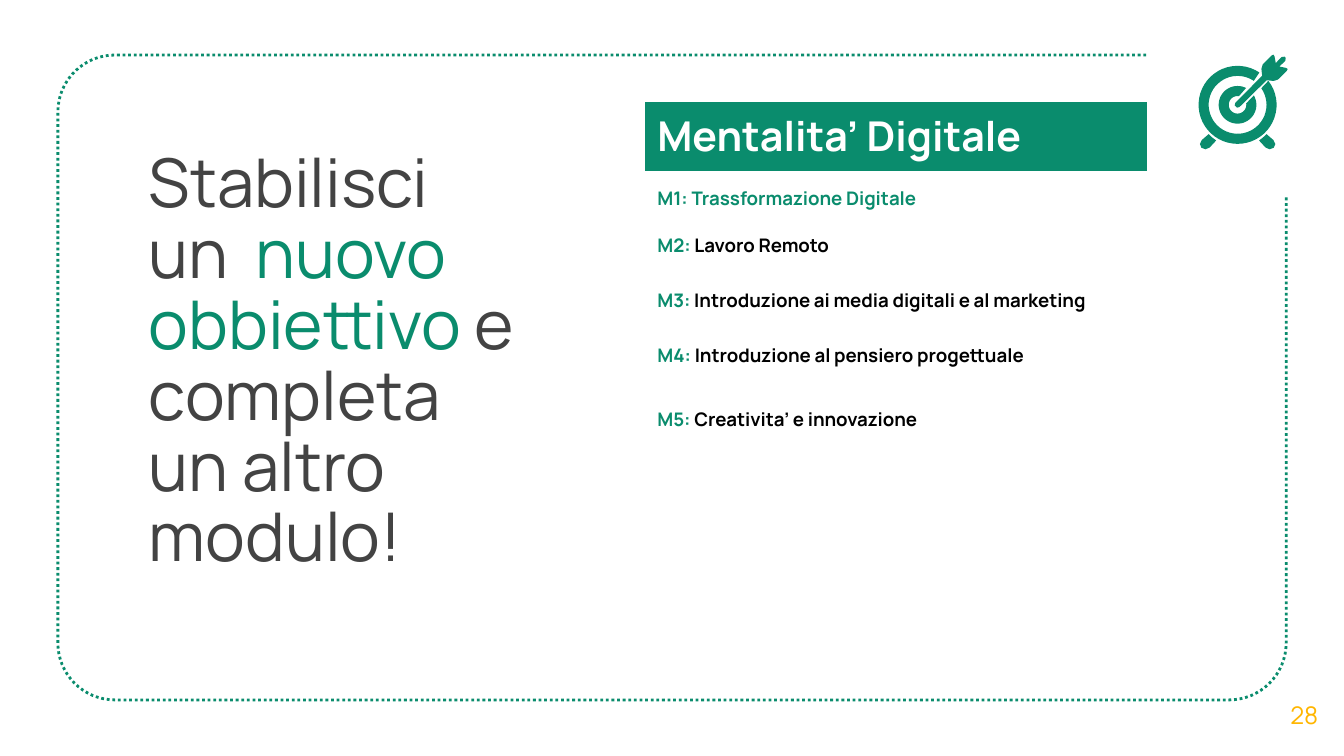
from math import cos, radians, sin

from pptx import Presentation
from pptx.dml.color import RGBColor
from pptx.enum.dml import MSO_LINE
from pptx.enum.text import MSO_ANCHOR, PP_ALIGN
from pptx.util import Pt

GREEN, GREY, WHITE, BLACK, YELLOW = "0A8C6D", "434343", "FFFFFF", "000000", "FFB600"


def rgb(value):
    return RGBColor.from_string(value)


def arc(cx, cy, radius, start, end, steps=16):
    """Points along an arc; angles in degrees, clockwise from the right."""
    angles = [radians(start + (end - start) * i / steps) for i in range(steps + 1)]
    return [(cx + radius * cos(a), cy + radius * sin(a)) for a in angles]


def set_all(obj, values):
    for name, value in values.items():
        setattr(obj, name, value)


class Deck:
    font = "Manrope"

    def __init__(self, prs):
        self.s = prs.slides.add_slide(prs.slide_layouts[6])

    def runs(self, p, parts, size, bold=False):
        """Write (text, colour) parts; a None part is a line break."""
        for part in parts:
            if part is None:
                p.add_line_break()
                continue
            r = p.add_run()
            r.text = part[0]
            set_all(r.font, {"name": self.font, "size": Pt(size), "bold": bold})
            r.font.color.rgb = rgb(part[1])

    def text(self, box, parts, size, frame, para):
        tf = self.s.shapes.add_textbox(*map(Pt, box)).text_frame
        set_all(tf, {"word_wrap": True, "margin_left": Pt(7.2), "margin_right": Pt(7.2),
                     "margin_top": Pt(7.2), "margin_bottom": Pt(7.2), **frame})
        p = tf.paragraphs[0]
        set_all(p, para)
        self.runs(p, parts, size)

    def outline(self, points, shapes=None, fill=None, line=None):
        """Closed and filled with fill, or open and dotted with line."""
        pts = [(Pt(x), Pt(y)) for x, y in points]
        builder = (shapes or self.s.shapes).build_freeform(*pts[0])
        builder.add_line_segments(pts[1:], close=bool(fill))
        sp = builder.convert_to_shape()
        sp.shadow.inherit = False
        if fill:
            sp.fill.solid()
            sp.fill.fore_color.rgb = rgb(fill)
            sp.line.fill.background()
        else:
            sp.fill.background()
            sp.line.color.rgb = rgb(line)
            set_all(sp.line, {"width": Pt(1.5), "dash_style": MSO_LINE.ROUND_DOT})

    def target(self, cx, cy):
        shapes = self.s.shapes.add_group_shape().shapes
        rings = [((20.9, -38, 304), (15.5, 304, -35)), ((10.1, -30, 297), (4.7, 279, -9))]
        for outer, inner in rings:
            ring = arc(cx, cy, *outer, 48) + arc(cx, cy, *inner, 48)
            self.outline(ring, shapes, GREEN)
        leg = [(-15.5, 15.7), (-19.2, 18.9), (-20.2, 21), (-19.4, 23), (-17.2, 23.8),
               (-15, 22.9), (-11.5, 19.1), (-13.5, 17.6)]
        for side in (1, -1):
            self.outline([(cx + side * x, cy + y) for x, y in leg], shapes, GREEN)
        # One half of the arrow, mirrored across its diagonal
        half = [(-1.5, 0.2), (-1.2, -1), (13.2, -15.6), (12.8, -19.3), (13.5, -21.6),
                (18.2, -26.4), (19.2, -26.9), (19.8, -26), (20.5, -22.4), (23.6, -25.6),
                (25.2, -25.8)]
        arrow = half + [(-y, -x) for x, y in reversed(half)]
        self.outline([(cx + x, cy + y) for x, y in arrow], shapes, GREEN)

    def table(self, left, top, width, heights, rows):
        """The first row is the header band."""
        frame = self.s.shapes.add_table(len(rows), 1, Pt(left), Pt(top), Pt(width),
                                        Pt(sum(heights)))
        table = frame.table
        set_all(table, {"first_row": False, "horz_banding": False})
        for i, (height, parts) in enumerate(zip(heights, rows)):
            table.rows[i].height = Pt(height)
            cell = table.cell(i, 0)
            if i == 0:
                cell.fill.solid()
                cell.fill.fore_color.rgb = rgb(GREEN)
            else:
                cell.fill.background()
            cell.vertical_anchor = MSO_ANCHOR.MIDDLE if i == 1 else MSO_ANCHOR.TOP
            self.runs(cell.text_frame.paragraphs[0], parts, 10 if i else 22, True)


def main():
    prs = Presentation()
    set_all(prs, {"slide_width": Pt(720), "slide_height": Pt(405)})
    deck = Deck(prs)

    left, top, right, bottom, radius = 31, 29.5, 689, 375, 30.5
    frame = [(614, top)]
    frame += arc(left + radius, top + radius, radius, 270, 180)
    frame += arc(left + radius, bottom - radius, radius, 180, 90)
    frame += arc(right - radius, bottom - radius, radius, 90, 0)
    frame += [(right, 105)]
    deck.outline(frame, line=GREEN)

    deck.text((72.7, 70.6, 213.8, 67.7),
              [("Stabilisci", GREY), None, ("un  ", GREY), ("nuovo obbiettivo ", GREEN),
               ("e completa un altro modulo!", GREY)],
              36, {"margin_top": Pt(10)}, {"line_spacing": 0.88})
    deck.text((677.5, 361.4, 42.5, 43.2), [("28", YELLOW)], 13,
              {"vertical_anchor": MSO_ANCHOR.MIDDLE}, {"alignment": PP_ALIGN.CENTER})
    deck.target(663, 56.2)

    modules = ["Lavoro Remoto", "Introduzione ai media digitali e al marketing",
               "Introduzione al pensiero progettuale", "Creativita’ e innovazione"]
    rows = [[("Mentalita’ Digitale", WHITE)], [("M1: Trassformazione Digitale", GREEN)]]
    rows += [[(f"M{n}: ", GREEN), (name, BLACK)] for n, name in enumerate(modules, 2)]
    deck.table(345, 54.4, 270, [37.4, 29.5, 29.5, 29.5, 34, 29.5], rows)

    prs.save("out.pptx")


if __name__ == "__main__":
    main()
